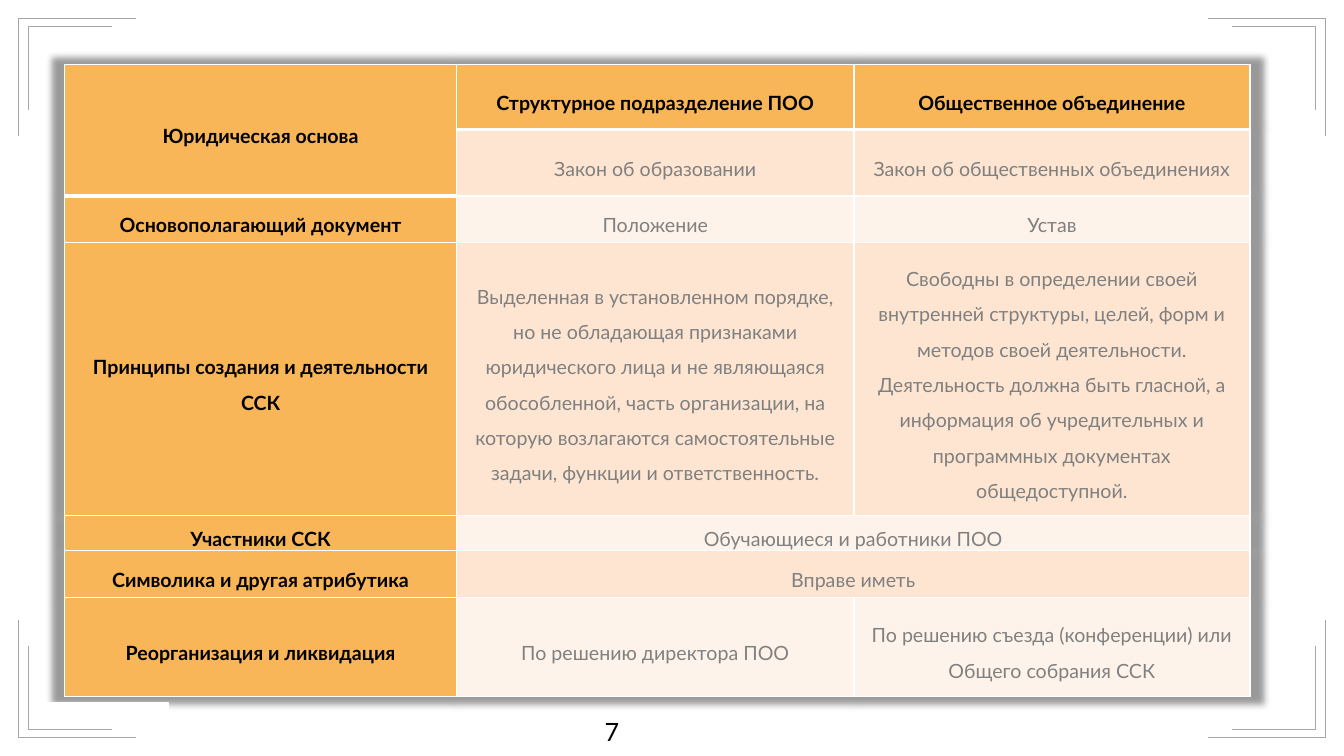
from itertools import product

from lxml.etree import SubElement
from pptx import Presentation
from pptx.dml.color import RGBColor
from pptx.enum.shapes import MSO_CONNECTOR, MSO_SHAPE
from pptx.enum.text import MSO_ANCHOR, PP_ALIGN
from pptx.oxml import parse_xml
from pptx.oxml.ns import nsdecls, qn
from pptx.util import Cm, Pt

COLOURS = {
    "frame": "A6A6A6",
    "heading": "F9B658",
    "odd": "FDE5D1",
    "even": "FEF3EA",
    "strong": "000000",
    "body": "808080",
    "white": "FFFFFF",
}
FONT = "Lato"
PAGE_WIDTH, PAGE_HEIGHT = 33.87, 19.05
COLUMN_WIDTHS = (9.88, 10.01, 9.98)
ROW_HEIGHTS = (1.63, 1.68, 1.17, 6.88, 0.79, 1.17, 2.51)
HEADING_ROWS = (2, 1, 1)
MERGES = (((0, 0), (1, 0)), ((4, 1), (4, 2)), ((5, 1), (5, 2)))
ROWS = (
    ("Юридическая основа", "Структурное подразделение ПОО", "Общественное объединение"),
    ("", "Закон об образовании", "Закон об общественных объединениях"),
    ("Основополагающий документ", "Положение", "Устав"),
    (
        "Принципы создания и деятельности ССК",
        "Выделенная в установленном порядке, но не обладающая признаками "
        "юридического лица и не являющаяся обособленной, часть организации, "
        "на которую возлагаются самостоятельные задачи, функции и ответственность.",
        "Свободны в определении своей внутренней структуры, целей, форм и "
        "методов своей деятельности. Деятельность должна быть гласной, а "
        "информация об учредительных и программных документах общедоступной.",
    ),
    ("Участники ССК", "Обучающиеся и работники ПОО", ""),
    ("Символика и другая атрибутика", "Вправе иметь", ""),
    (
        "Реорганизация и ликвидация",
        "По решению директора ПОО",
        "По решению съезда (конференции) или Общего собрания ССК",
    ),
)


def colour(name):
    """Return the named colour."""
    return RGBColor.from_string(COLOURS[name])


def style_text(paragraph, size, name, bold=False):
    """Format every run of a paragraph."""
    for span in paragraph.runs:
        span.font.name = FONT
        span.font.size = Pt(size)
        span.font.bold = bold
        span.font.color.rgb = colour(name)


def add_frame(page, left, top, width, height):
    """Draw a double angle in each corner of the given box."""
    angles = ((0, 0, 2.97, 2.97), (0.25, 0.2, 2.11, 2.11))
    corners = product(((left, 1), (left + width, -1)), ((top, 1), (top + height, -1)))
    for (corner_x, across), (corner_y, down) in corners:
        for inset_x, inset_y, length, drop in angles:
            x, y = corner_x + across * inset_x, corner_y + down * inset_y
            for end_x, end_y in ((x + across * length, y), (x, y + down * drop)):
                line = page.shapes.add_connector(
                    MSO_CONNECTOR.STRAIGHT, Cm(x), Cm(y), Cm(end_x), Cm(end_y)
                )
                line.line.color.rgb = colour("frame")
                line.line.width = Pt(0.5)
                SubElement(line._element.spPr, qn("a:effectLst"))


def add_borders(cell, row, column):
    """Give a cell white borders, thicker under the heading."""
    heading_end = HEADING_ROWS[column]
    widths = {
        "lnL": 1,
        "lnR": 1,
        "lnT": 3 if row == heading_end else 1,
        "lnB": 3 if row < heading_end else 1,
    }
    properties = cell._tc.get_or_add_tcPr()
    for side, width in widths.items():
        border = SubElement(properties, qn(f"a:{side}"), w=str(Pt(width)))
        fill = SubElement(border, qn("a:solidFill"))
        SubElement(fill, qn("a:srgbClr"), val=COLOURS["white"])


def fill_cell(cell, text, row, column):
    """Set the text and look of one table cell."""
    add_borders(cell, row, column)
    heading = row == 0 or column == 0
    band = "odd" if row % 2 else "even"
    cell.fill.solid()
    cell.fill.fore_color.rgb = colour("heading" if heading else band)
    cell.vertical_anchor = MSO_ANCHOR.MIDDLE
    cell.margin_left = cell.margin_right = Cm(0.19)
    cell.margin_top = cell.margin_bottom = 0
    if text:
        para = cell.text_frame.paragraphs[0]
        para.text = text
        para.alignment = PP_ALIGN.CENTER
        para.line_spacing = 1.5
        para.space_after = Pt(8)
        style_text(para, 14, "strong" if heading else "body", heading)


def add_comparison(page, left, top, width, height):
    """Build the comparison table with a soft shadow around it."""
    table = page.shapes.add_table(
        len(ROWS), len(COLUMN_WIDTHS), Cm(left), Cm(top), Cm(width), Cm(height)
    ).table
    table.horz_banding = False
    for column, column_width in zip(table.columns, COLUMN_WIDTHS):
        column.width = Cm(column_width)
    for row, row_height in zip(table.rows, ROW_HEIGHTS):
        row.height = Cm(row_height)
    for row, texts in enumerate(ROWS):
        for column, text in enumerate(texts):
            fill_cell(table.cell(row, column), text, row, column)
    for first, last in MERGES:
        table.cell(*first).merge(table.cell(*last))
    shadow = parse_xml(
        f'<a:effectLst {nsdecls("a")}><a:outerShdw blurRad="63500" sx="102000" '
        'sy="102000" algn="ctr" rotWithShape="0"><a:srgbClr val="000000">'
        '<a:alpha val="40000"/></a:srgbClr></a:outerShdw></a:effectLst>'
    )
    table._tbl.tblPr.insert(0, shadow)


def add_footer(page, left, top, width, height):
    """Place the white strip and the page number."""
    strip = page.shapes.add_shape(
        MSO_SHAPE.RECTANGLE, Cm(left), Cm(top), Cm(3.45), Cm(0.43)
    )
    strip.shadow.inherit = False
    strip.fill.solid()
    strip.fill.fore_color.rgb = colour("white")
    strip.line.color.rgb = colour("white")
    strip.line.width = Pt(1)
    box = page.shapes.add_textbox(
        Cm(left + 14.2), Cm(top + 0.23), Cm(width - 14.2), Cm(height - 0.23)
    )
    box.text_frame.word_wrap = True
    para = box.text_frame.paragraphs[0]
    para.text = "7"
    style_text(para, 18, "strong")


def main():
    """Build and save the deck."""
    deck = Presentation()
    deck.slide_width, deck.slide_height = Cm(PAGE_WIDTH), Cm(PAGE_HEIGHT)
    page = deck.slides.add_slide(deck.slide_layouts[6])
    margin = 0.46
    add_frame(page, margin, margin, PAGE_WIDTH - 2 * margin, PAGE_HEIGHT - 2 * margin)
    add_comparison(page, 1.63, 1.63, sum(COLUMN_WIDTHS), sum(ROW_HEIGHTS))
    add_footer(page, 0.79, 17.7, 31.14, 1.25)
    deck.save("out.pptx")


if __name__ == "__main__":
    main()
